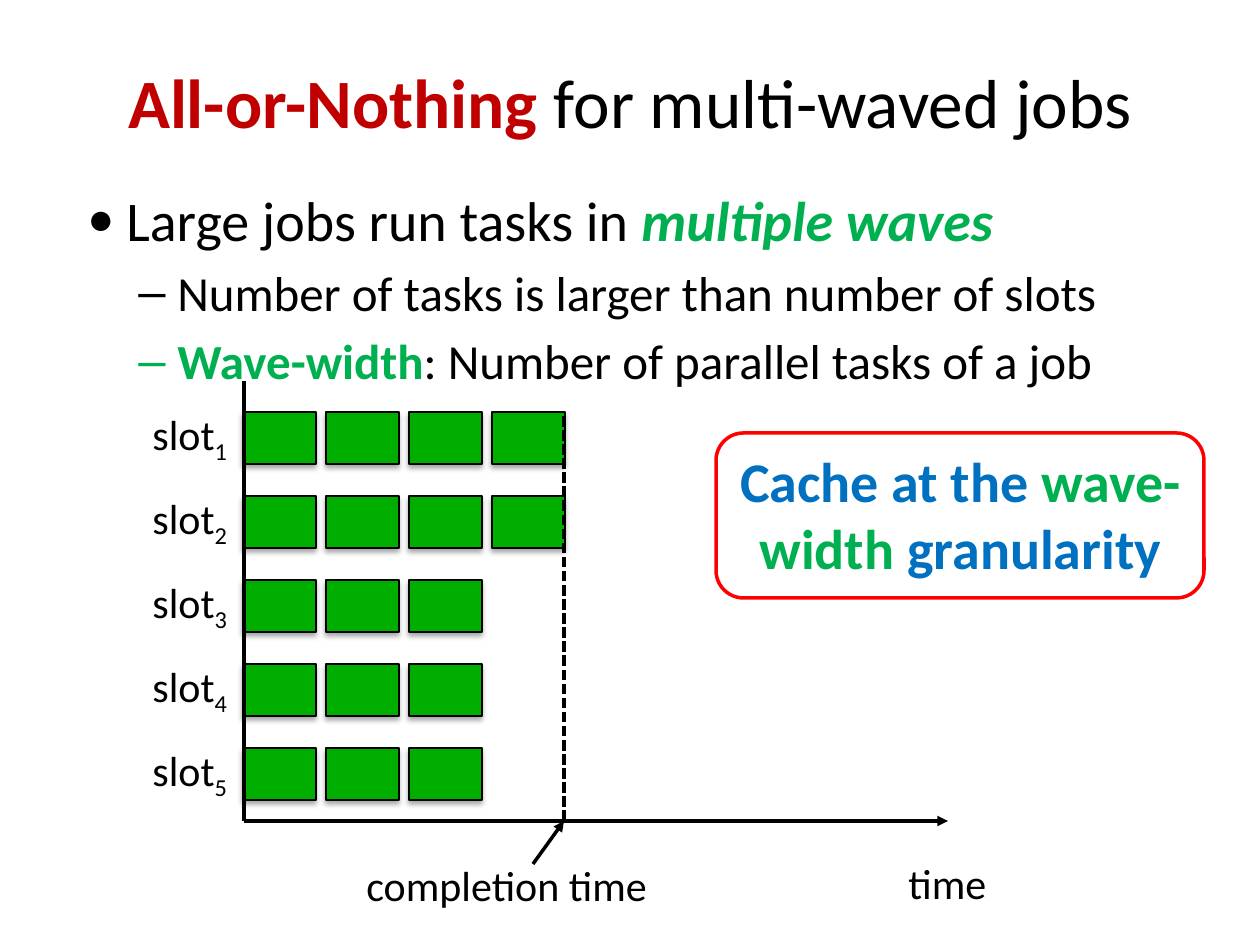
"""Build a slide on all-or-nothing caching for multi-waved jobs."""
from dataclasses import dataclass

from lxml import etree
from pptx import Presentation
from pptx.dml.color import RGBColor
from pptx.enum.dml import MSO_LINE
from pptx.enum.shapes import MSO_CONNECTOR, MSO_SHAPE
from pptx.enum.text import MSO_ANCHOR, PP_ALIGN
from pptx.oxml.ns import qn
from pptx.util import Emu, Pt

STRAIGHT = MSO_CONNECTOR.STRAIGHT
RECTANGLE = MSO_SHAPE.RECTANGLE
ROUNDED = MSO_SHAPE.ROUNDED_RECTANGLE
LEFT, CENTER = PP_ALIGN.LEFT, PP_ALIGN.CENTER
TOP, MIDDLE = MSO_ANCHOR.TOP, MSO_ANCHOR.MIDDLE
SHORT_DASH = MSO_LINE.SQUARE_DOT

BLACK = RGBColor(0x00, 0x00, 0x00)
DARK_RED = RGBColor(0xC0, 0x00, 0x00)
RED = RGBColor(0xFF, 0x00, 0x00)
GREEN = RGBColor(0x00, 0xB0, 0x50)
TASK_GREEN = RGBColor(0x00, 0xAE, 0x00)
BLUE = RGBColor(0x00, 0x70, 0xC0)

FONT = "Calibri"
PX_PER_INCH = 126
TASKS_PER_SLOT = (4, 4, 3, 3, 3)
TASK_LEFT, TASK_TOP = 243, 412
TASK_WIDTH, TASK_HEIGHT = 73, 52
TASK_STEP, SLOT_STEP = 83, 84
AXIS_X, AXIS_Y = 244, 821
DONE_X = 564


@dataclass(frozen=True)
class Span:
    text: str
    color: RGBColor = BLACK
    bold: bool = False
    italic: bool = False
    subscript: bool = False


@dataclass(frozen=True)
class Para:
    spans: tuple[Span, ...]
    size: float = 24
    align: PP_ALIGN = LEFT
    bullet: str = ""
    bullet_percent: int = 100
    indent: int = 0
    space_before: float = 0


@dataclass(frozen=True)
class Box:
    left: int
    top: int
    width: int
    height: int


def px(length: int) -> Emu:
    """Turn pixels into EMU."""
    return Emu(round(length * 914400 / PX_PER_INCH))


def bounds(box: Box) -> tuple[Emu, ...]:
    """Return the box in EMU."""
    return px(box.left), px(box.top), px(box.width), px(box.height)


def add_bullet(paragraph, para: Para) -> None:
    """Give a paragraph its hanging bullet."""
    properties = paragraph._p.get_or_add_pPr()
    properties.set("marL", str(px(para.indent)))
    properties.set("indent", str(-px(39)))
    size = etree.SubElement(properties, qn("a:buSzPct"))
    size.set("val", str(para.bullet_percent * 1000))
    etree.SubElement(properties, qn("a:buFont")).set("typeface", "Arial")
    etree.SubElement(properties, qn("a:buChar")).set("char", para.bullet)


def add_text(page, box: Box, *paras: Para, wrap: bool = True,
             anchor: MSO_ANCHOR = TOP) -> None:
    """Add a text box of formatted paragraphs."""
    frame = page.shapes.add_textbox(*bounds(box)).text_frame
    frame.word_wrap = wrap
    frame.vertical_anchor = anchor
    for index, para in enumerate(paras):
        paragraph = frame.add_paragraph() if index else frame.paragraphs[0]
        paragraph.alignment = para.align
        paragraph.space_before = Pt(para.space_before)
        if para.bullet:
            add_bullet(paragraph, para)
        for span in para.spans:
            run = paragraph.add_run()
            run.text = span.text
            font = run.font
            font.name, font.size = FONT, Pt(para.size)
            font.bold, font.italic = span.bold, span.italic
            font.color.rgb = span.color
            if span.subscript:
                run._r.get_or_add_rPr().set("baseline", "-25000")


def add_task(page, box: Box) -> None:
    """Add one task with a soft shadow below it."""
    task = page.shapes.add_shape(RECTANGLE, *bounds(box))
    task.fill.solid()
    task.fill.fore_color.rgb = TASK_GREEN
    task.line.color.rgb = BLACK
    task.line.width = Pt(0.75)
    effects = etree.SubElement(task._element.spPr, qn("a:effectLst"))
    shadow = etree.SubElement(effects, qn("a:outerShdw"), blurRad=str(Pt(3.1)),
                              dist=str(Pt(1.8)), dir="5400000", rotWithShape="0")
    color = etree.SubElement(shadow, qn("a:srgbClr"), val="000000")
    etree.SubElement(color, qn("a:alpha"), val="35000")


def add_line(page, start: tuple[int, int], end: tuple[int, int], *,
             arrow: bool = False, dashed: bool = False) -> None:
    """Add a black line, dashed or with an arrowhead at its end."""
    line = page.shapes.add_connector(STRAIGHT, *map(px, start + end))
    line.line.color.rgb = BLACK
    line.line.width = Pt(2)
    if dashed:
        line.line.dash_style = SHORT_DASH
    if arrow:
        etree.SubElement(line.line._get_or_add_ln(), qn("a:tailEnd"), type="triangle")
    etree.SubElement(line._element.spPr, qn("a:effectLst"))


def add_schedule(page) -> None:
    """Add the slots, their tasks and the time axis."""
    for slot, count in enumerate(TASKS_PER_SLOT):
        top = TASK_TOP + slot * SLOT_STEP
        label = Para((Span("slot"), Span(str(slot + 1), subscript=True)))
        add_text(page, Box(140, top - 10, 102, 63), label, wrap=False)
        for wave in range(count):
            left = TASK_LEFT + wave * TASK_STEP
            add_task(page, Box(left, top, TASK_WIDTH, TASK_HEIGHT))
    add_line(page, (DONE_X, AXIS_Y), (DONE_X, TASK_TOP), dashed=True)
    add_line(page, (533, 864), (DONE_X, AXIS_Y), arrow=True)
    add_line(page, (AXIS_X, AXIS_Y), (AXIS_X, 381))
    add_line(page, (AXIS_X, AXIS_Y), (948, AXIS_Y), arrow=True)
    add_text(page, Box(354, 853, 309, 63), Para((Span("completion time"),)), wrap=False)
    add_text(page, Box(896, 851, 105, 63), Para((Span("time"),)), wrap=False)


def add_callout(page) -> None:
    """Add the conclusion in its red outline."""
    add_text(page, Box(704, 440, 513, 149), Para((
        Span("Cache at the ", BLUE, bold=True),
        Span("wave-width", GREEN, bold=True),
        Span(" granularity", BLUE, bold=True)), size=32, align=CENTER))
    outline = page.shapes.add_shape(ROUNDED, *bounds(Box(716, 433, 488, 165)))
    outline.shadow.inherit = False
    outline.fill.background()
    outline.line.color.rgb = RED
    outline.line.width = Pt(2)


def main() -> None:
    """Build and save the slide."""
    deck = Presentation()
    deck.slide_width, deck.slide_height = px(1260), px(945)
    page = deck.slides.add_slide(deck.slide_layouts[6])
    add_text(page, Box(63, 22, 1134, 157), Para((
        Span("All-or-Nothing", DARK_RED, bold=True),
        Span(" for multi-waved jobs")), size=39.6, align=CENTER), anchor=MIDDLE)
    add_schedule(page)
    add_text(
        page, Box(63, 179, 1134, 207),
        Para((Span("Large jobs run tasks in "),
              Span("multiple waves", GREEN, bold=True, italic=True)),
             size=32, bullet="●", bullet_percent=80, indent=51, space_before=6),
        Para((Span("Number of tasks is larger than number of slots"),),
             size=28, bullet="–", indent=102, space_before=5.6),
        Para((Span("Wave-width", GREEN, bold=True),
              Span(": Number of parallel tasks of a job")),
             size=28, bullet="–", indent=102, space_before=5.6))
    add_callout(page)
    deck.save("out.pptx")


if __name__ == "__main__":
    main()
